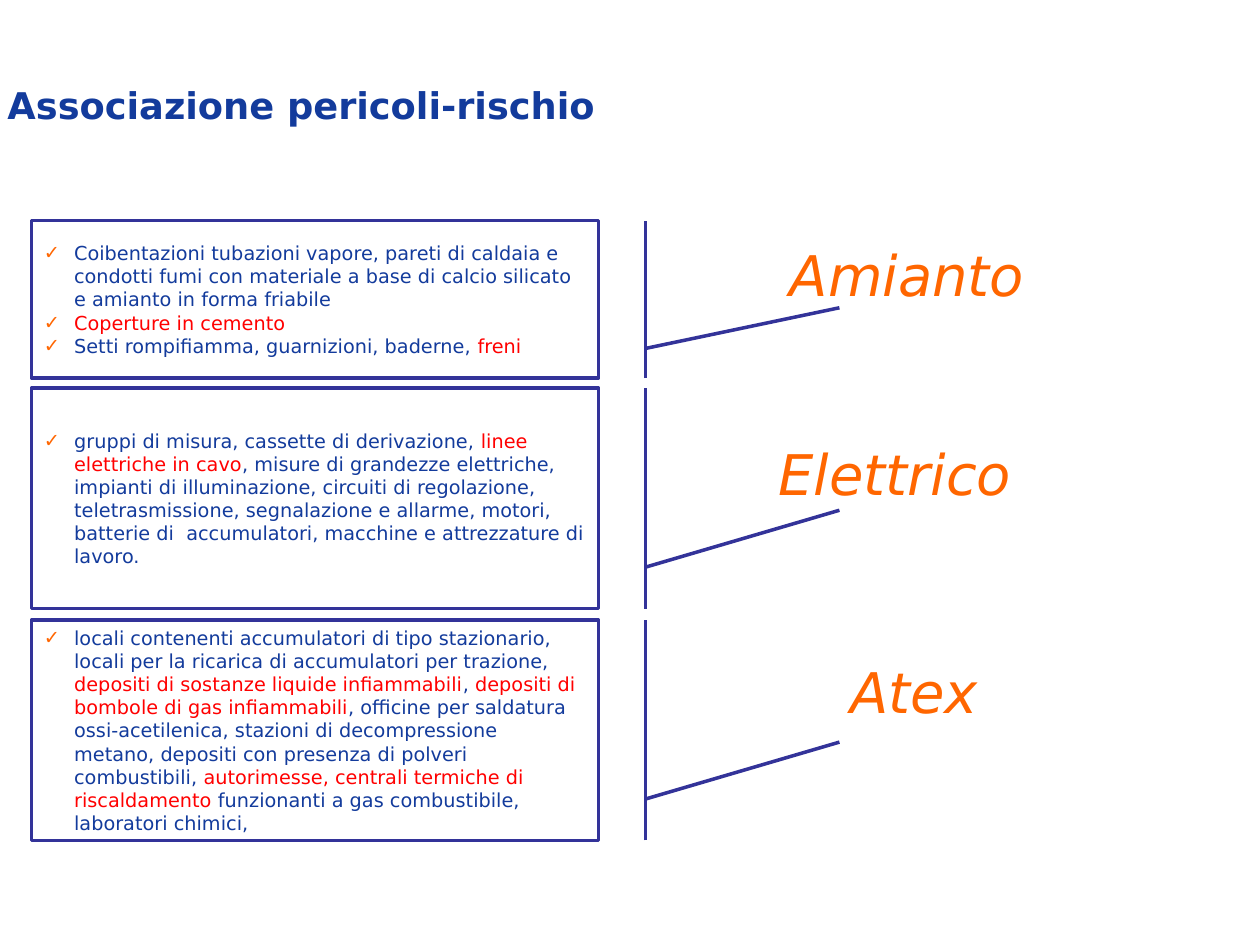
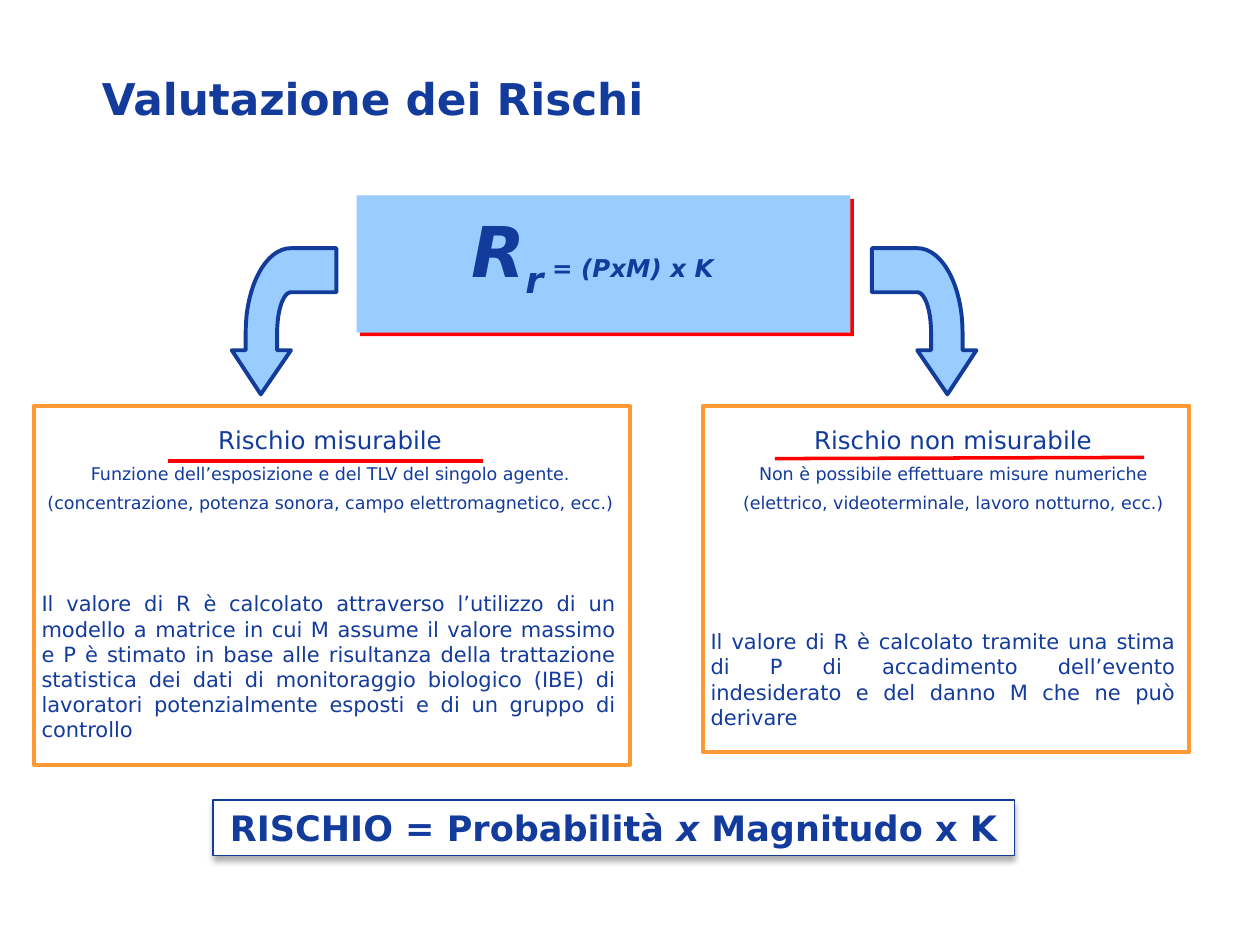
import pptx
import pptx.util
import pptx.dml.color
import pptx.enum.shapes
import pptx.enum.text
import pptx.oxml
import pptx.oxml.ns
import lxml.etree

Inches = pptx.util.Inches
SHAPE = pptx.enum.shapes.MSO_SHAPE
ALIGN = pptx.enum.text.PP_ALIGN
ANCHOR = pptx.enum.text.MSO_ANCHOR

FONT = "DejaVu Sans"
NAVY, RED, ORANGE, AMBER = "133B9C", "FF0000", "FF6600", "FF9933"
INDIGO, SKY, WHITE = "333399", "99CCFF", "FFFFFF"
PAD = (0.1, 0.05, 0.1, 0.05)
PANEL_PAD = (0.06, 0.06, 0.11, 0.06)

RISKS = [
    (1.75, 1.25, 4.5, [
        "Coibentazioni tubazioni vapore, pareti di caldaia e condotti fumi con "
        "materiale a base di calcio silicato e amianto in forma friabile",
        "|Coperture in cemento",
        "Setti rompifiamma, guarnizioni, baderne, |freni"],
     "Amianto", (6.17, 1.86), ALIGN.LEFT),
    (3.08, 1.75, 4.58, [
        "gruppi di misura, cassette di derivazione, |linee elettriche in cavo|, "
        "misure di grandezze elettriche, impianti di illuminazione, circuiti di "
        "regolazione, teletrasmissione, segnalazione e allarme, motori, batterie "
        "di  accumulatori, macchine e attrezzature di lavoro."],
     "Elettrico", (6.08, 3.44), ALIGN.LEFT),
    (4.92, 1.75, 4.42, [
        "locali contenenti accumulatori di tipo stazionario, locali per la "
        "ricarica di accumulatori per trazione, |depositi di sostanze liquide "
        "infiammabili|, |depositi di bombole di gas infiammabili|, officine per "
        "saldatura ossi-acetilenica, stazioni di decompressione metano, depositi "
        "con presenza di polveri combustibili, |autorimesse, centrali termiche di "
        "riscaldamento |funzionanti a gas combustibile, laboratori chimici,"],
     "Atex", (5.67, 5.17), ALIGN.CENTER),
]

PANELS = [
    ((0.27, 3.22, 4.73, 2.85), (0, 4.75),
     ["Rischio misurabile",
      "Funzione dell’esposizione e del TLV del singolo agente.",
      "(concentrazione, potenza sonora, campo elettromagnetico, ecc.)"],
     "Il valore di R è calcolato attraverso l’utilizzo di un modello a matrice "
     "in cui M assume il valore massimo e P è stimato in base alle risultanza "
     "della trattazione statistica dei dati di monitoraggio biologico (IBE) di "
     "lavoratori potenzialmente esposti e di un gruppo di controllo",
     (1.06, 0.44, 3.56, 0.44)),
    ((5.58, 3.22, 3.86, 2.75), (-0.03, 4.08),
     ["Rischio non misurabile",
      "Non è possibile effettuare misure numeriche",
      "(elettrico, videoterminale, lavoro notturno, ecc.)"],
     "Il valore di R è calcolato tramite una stima di P di accadimento "
     "dell’evento indesiderato e del danno M che ne può derivare",
     (0.57, 0.42, 3.5, 0.41)),
]


def rgb(code):
    return pptx.dml.color.RGBColor.from_string(code)


def lengths(*values):
    return [Inches(v) for v in values]


def put(target, values):
    for name, value in values.items():
        setattr(target, name, value)


def paint(shape, fill=None, line=None, width=1):
    shape.shadow.inherit = False
    if fill:
        shape.fill.solid()
        shape.fill.fore_color.rgb = rgb(fill)
    else:
        shape.fill.background()
    if line:
        shape.line.color.rgb = rgb(line)
        shape.line.width = pptx.util.Pt(width)
    else:
        shape.line.fill.background()


def child(parent, tag, **values):
    node = lxml.etree.SubElement(parent, pptx.oxml.ns.qn(tag))
    for name, value in values.items():
        node.set(name, str(value))
    return node


def shade(shape, color, alpha, blur, dist, angle):
    effects = shape._element.spPr.find(pptx.oxml.ns.qn("a:effectLst"))
    outer = child(effects, "a:outerShdw", blurRad=int(pptx.util.Pt(blur)),
                  dist=int(pptx.util.Pt(dist)), dir=angle * 60000,
                  algn="ctr", rotWithShape=0)
    child(child(outer, "a:srgbClr", val=color), "a:alpha", val=alpha * 1000)


def frame(shape, pad=PAD, anchor=ANCHOR.TOP):
    text = shape.text_frame
    left, top, right, bottom = lengths(*pad)
    put(text, dict(word_wrap=True, vertical_anchor=anchor, margin_left=left,
                   margin_top=top, margin_right=right, margin_bottom=bottom))
    return text


def textbox(slide, box, pad=PAD, anchor=ANCHOR.TOP):
    return frame(slide.shapes.add_textbox(*lengths(*box)), pad, anchor)


def write(para, text, size, color=NAVY, **style):
    run = para.add_run()
    run.text = text
    put(run.font, dict(name=FONT, size=pptx.util.Pt(size), **style))
    run.font.color.rgb = rgb(color)
    return run


def title(slide, text, size, box, anchor):
    words = textbox(slide, box, (0, 0.06, 0, 0.06), anchor)
    write(words.paragraphs[0], text, size, bold=True)


def check(para):
    props = para._p.get_or_add_pPr()
    props.set("marL", str(Inches(0.24)))
    props.set("indent", str(-Inches(0.24)))
    child(child(props, "a:buClr"), "a:srgbClr", val=ORANGE)
    child(props, "a:buFont", typeface=FONT)
    child(props, "a:buChar", char="✓")


def risk(slide, top, height, width, items, label, spot, align):
    words = textbox(slide, (0.25, top, width, height), PAD, ANCHOR.MIDDLE)
    for n, item in enumerate(items):
        para = words.add_paragraph() if n else words.paragraphs[0]
        check(para)
        for k, part in enumerate(item.split("|")):
            if part:
                write(para, part, 11, RED if k % 2 else NAVY)

    para = textbox(slide, (*spot, 3.17, 0.66)).paragraphs[0]
    para.alignment = align
    write(para, label, 32, ORANGE, italic=True)

    callout = slide.shapes.add_shape(SHAPE.LINE_CALLOUT_1_BORDER_AND_ACCENT_BAR,
                                     *lengths(0.25, top, 4.5, height))
    for n, value in enumerate((0.188, -0.083, 0.446, -0.425)):
        callout.adjustments[n] = value
    callout.rotation = 180
    paint(callout, None, INDIGO, 2)


def formula(slide, left, top):
    plate = slide.shapes.add_shape(SHAPE.RECTANGLE, *lengths(left, top, 3.92, 1.09))
    paint(plate, SKY)
    shade(plate, RED, 100, 0, 2.8, 45)
    words = textbox(slide, (left - 0.29, top - 0.08, 4.33, 1.1),
                    (0.09, 0.04, 0.09, 0.04), ANCHOR.MIDDLE)
    para = words.paragraphs[0]
    para.alignment = ALIGN.CENTER
    for text, size, base in (("R", 40, 0), ("r", 36, -25), (" = (PxM) x K", 14, 0)):
        run = write(para, text, size, bold=True, italic=True)
        run.font._element.set("baseline", str(base * 1000))


def curve(a, b, c, d, steps=16):
    for n in range(1, steps + 1):
        t = n / steps
        u = 1 - t
        yield tuple(u**3 * p + 3 * u * u * t * q + 3 * u * t * t * r + t**3 * s
                    for p, q, r, s in zip(a, b, c, d))


def arrow(slide, left, top, flip=False):
    points = [(0.6, 1.16), (0.83, 0.81), (0.72, 0.81), (0.72, 0.67),
              *curve((0.72, 0.67), (0.72, 0.3), (0.56, 0), (0.36, 0)),
              (0, 0), (0, 0.35), (0.36, 0.35),
              *curve((0.36, 0.35), (0.42, 0.35), (0.47, 0.49), (0.47, 0.67)),
              (0.47, 0.81), (0.36, 0.81)]
    if flip:
        points = [(0.83 - x, y) for x, y in points]
    points = [lengths(*point) for point in points]
    form = slide.shapes.build_freeform(*points[0], scale=1.0)
    form.add_line_segments(points[1:], close=True)
    paint(form.convert_to_shape(*lengths(left, top)), SKY, NAVY, 2.25)


def panel(slide, box, head, lines, body, rule):
    left, top = box[:2]
    shift, width = head
    words = textbox(slide, (left + shift, top + 0.09, width, 0.87), PANEL_PAD)
    for n, line in enumerate(lines):
        para = words.add_paragraph() if n else words.paragraphs[0]
        para.alignment = ALIGN.CENTER
        if n:
            para.space_before = pptx.util.Pt(5)
        write(para, line, 10 if n else 14)

    border = slide.shapes.add_shape(SHAPE.RECTANGLE, *lengths(*box))
    paint(border, None, AMBER, 2.25)
    para = frame(border, (0.06, 0.06, 0.11, 0.18), ANCHOR.BOTTOM).paragraphs[0]
    para.alignment = ALIGN.JUSTIFY
    write(para, body, 12)

    x1, y1, x2, y2 = rule
    line = slide.shapes.add_connector(
        pptx.enum.shapes.MSO_CONNECTOR.STRAIGHT,
        *lengths(left + x1, top + y1, left + x2, top + y2))
    line.line.color.rgb = rgb(RED)
    line.line.width = pptx.util.Pt(2)
    child(line._element.spPr, "a:effectLst")


def banner(slide, box):
    shape = slide.shapes.add_shape(SHAPE.RECTANGLE, *lengths(*box))
    paint(shape, WHITE, NAVY, 0.75)
    shade(shape, "000000", 32, 3.5, 2.2, 90)
    para = frame(shape, PAD, ANCHOR.MIDDLE).paragraphs[0]
    para.alignment = ALIGN.CENTER
    for text, slant in (("RISCHIO = Probabilità ", False), ("x", True),
                        (" Magnitudo x K", False)):
        write(para, text, 20, bold=True, italic=slant)


def hazards(slide):
    title(slide, "Associazione pericoli-rischio", 21, (0.06, 0, 8.34, 1.07),
          ANCHOR.BOTTOM)
    for row in RISKS:
        risk(slide, *row)


def rating(slide):
    title(slide, "Valutazione dei Rischi", 25, (0.81, 0.42, 8.13, 0.72),
          ANCHOR.MIDDLE)
    formula(slide, 2.83, 1.55)
    for row in PANELS:
        panel(slide, *row)
    arrow(slide, 6.92, 1.97)
    arrow(slide, 1.84, 1.97, flip=True)
    banner(slide, (1.69, 6.35, 6.36, 0.44))


def main():
    deck = pptx.Presentation()
    put(deck, dict(slide_width=Inches(10), slide_height=Inches(7.5)))
    for build in (hazards, rating):
        build(deck.slides.add_slide(deck.slide_layouts[6]))
    deck.save("out.pptx")


if __name__ == "__main__":
    main()
